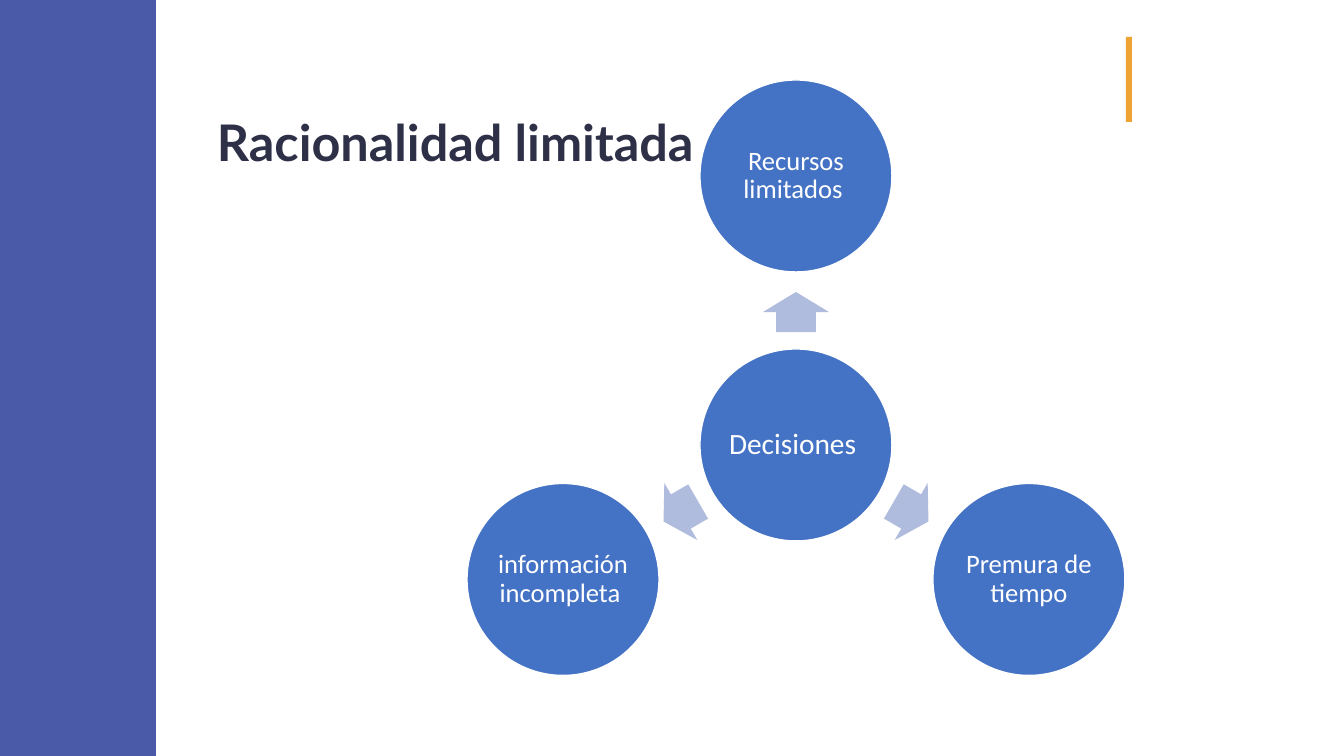
from math import cos, radians, sin

from pptx import Presentation
from pptx.dml.color import RGBColor
from pptx.enum.shapes import MSO_SHAPE
from pptx.enum.text import MSO_ANCHOR, PP_ALIGN
from pptx.util import Emu, Pt

EMU_PER_PX = 914400 / 100.8

WHITE = RGBColor(0xFF, 0xFF, 0xFF)
INDIGO = RGBColor(0x4A, 0x5A, 0xA8)
ORANGE = RGBColor(0xEE, 0xA2, 0x32)
NAVY = RGBColor(0x2E, 0x30, 0x48)
BLUE = RGBColor(0x44, 0x72, 0xC4)
LAVENDER = RGBColor(0xB0, 0xBC, 0xDE)

HUB_X, HUB_Y = 796, 445
CIRCLE_SIZE = 192
CIRCLE_ORBIT = 269
ARROW_ORBIT = 133
ARROW_LENGTH, ARROW_WIDTH = 40, 66

# Text and direction in degrees, clockwise from the right
FACTORS = [
    ("Recursos limitados ", 270),
    ("Premura de tiempo", 30),
    ("información incompleta ", 150),
]


def px(value):
    return Emu(round(value * EMU_PER_PX))


def add_filled_shape(slide, kind, left, top, width, height, color):
    shape = slide.shapes.add_shape(kind, px(left), px(top), px(width), px(height))
    shape.shadow.inherit = False
    shape.fill.solid()
    shape.fill.fore_color.rgb = color
    shape.line.fill.background()
    return shape


def write_text(shape, text, font_name, size, color, alignment, bold=False):
    frame = shape.text_frame
    frame.word_wrap = True
    frame.vertical_anchor = MSO_ANCHOR.MIDDLE
    paragraph = frame.paragraphs[0]
    paragraph.alignment = alignment
    paragraph.line_spacing = 0.9
    run = paragraph.add_run()
    run.text = text
    run.font.name = font_name
    run.font.size = Pt(size)
    run.font.bold = bold
    run.font.color.rgb = color


def add_title(slide, text):
    box = slide.shapes.add_textbox(px(207), px(88), px(902), px(114))
    write_text(box, text, "Lato", 36, NAVY, PP_ALIGN.LEFT, bold=True)


def add_circle(slide, center_x, center_y, text, size):
    circle = add_filled_shape(
        slide, MSO_SHAPE.OVAL, center_x - CIRCLE_SIZE / 2, center_y - CIRCLE_SIZE / 2,
        CIRCLE_SIZE, CIRCLE_SIZE, BLUE)
    circle.line.color.rgb = WHITE
    circle.line.width = Pt(1)
    frame = circle.text_frame
    frame.margin_left = frame.margin_right = px(0)
    frame.margin_top = frame.margin_bottom = px(3)
    write_text(circle, text, "Calibri", size, WHITE, PP_ALIGN.CENTER)


def add_arrow(slide, center_x, center_y, angle):
    arrow = add_filled_shape(
        slide, MSO_SHAPE.RIGHT_ARROW, center_x - ARROW_LENGTH / 2,
        center_y - ARROW_WIDTH / 2, ARROW_LENGTH, ARROW_WIDTH, LAVENDER)
    arrow.adjustments[0] = 0.6
    arrow.adjustments[1] = 0.5
    arrow.rotation = angle


def orbit_point(radius, angle):
    """Return the point at the given distance and direction from the hub."""
    return (HUB_X + radius * cos(radians(angle)),
            HUB_Y + radius * sin(radians(angle)))


def main():
    presentation = Presentation()
    presentation.slide_width = px(1344)
    presentation.slide_height = px(756)
    slide = presentation.slides.add_slide(presentation.slide_layouts[6])

    add_filled_shape(slide, MSO_SHAPE.RECTANGLE, 0, 0, 156, 756, INDIGO)
    add_filled_shape(slide, MSO_SHAPE.RECTANGLE, 1126, 37, 6, 85, ORANGE)
    add_title(slide, "Racionalidad limitada")

    add_circle(slide, HUB_X, HUB_Y, "Decisiones ", 21)
    for text, angle in FACTORS:
        add_arrow(slide, *orbit_point(ARROW_ORBIT, angle), angle)
        add_circle(slide, *orbit_point(CIRCLE_ORBIT, angle), text, 19)

    presentation.save("out.pptx")


if __name__ == "__main__":
    main()
